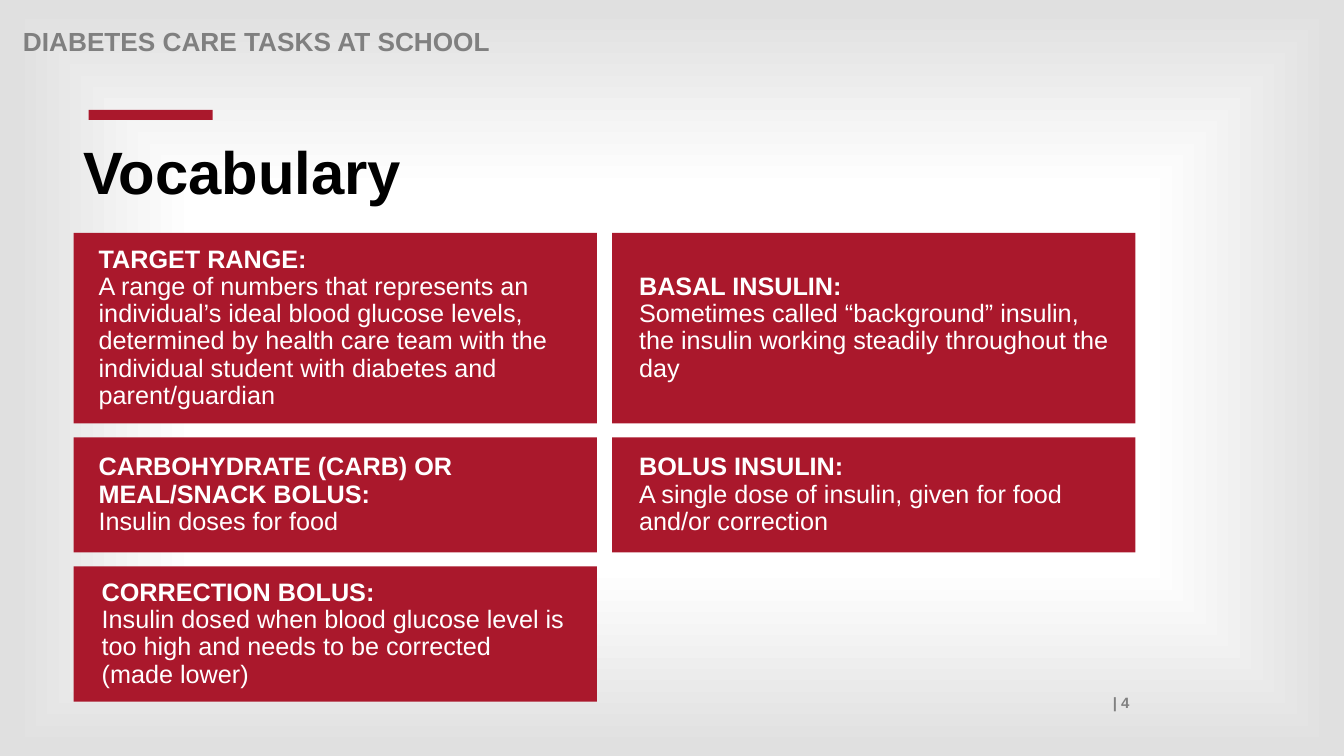
from pptx import Presentation
from pptx.dml.color import RGBColor
from pptx.enum.shapes import MSO_SHAPE
from pptx.enum.text import MSO_ANCHOR, PP_ALIGN
from pptx.oxml import parse_xml
from pptx.oxml.ns import nsdecls
from pptx.util import Inches, Pt

COLORS = {
    "red": "AA182C",
    "gray": "808080",
    "black": "000000",
    "white": "FFFFFF",
    "edge": "E0E0E0",
}
FONT = "Arial"

GRID_LEFT, GRID_TOP = 0.73, 2.31
CARD_WIDTH, COLUMN_GAP, ROW_GAP = 5.19, 0.15, 0.14
ROW_HEIGHTS = [1.89, 1.14, 1.34]
TEXT_WIDTH = 4.88

# row, column, text indent, term, definition
CARDS = [
    (0, 0, 0.15, "TARGET RANGE:",
     "A range of numbers that represents an individual’s ideal blood glucose "
     "levels, determined by health care team with the individual student with "
     "diabetes and parent/guardian"),
    (0, 1, 0.17, "BASAL INSULIN:",
     "Sometimes called “background” insulin, the insulin working steadily "
     "throughout the day"),
    (1, 0, 0.15, "CARBOHYDRATE (CARB) OR MEAL/SNACK BOLUS:",
     "Insulin doses for food"),
    (1, 1, 0.17, "BOLUS INSULIN:",
     "A single dose of insulin, given for food and/or correction"),
    (2, 0, 0.18, "CORRECTION BOLUS:",
     "Insulin dosed when blood glucose level is too high and needs to be "
     "corrected\n(made lower)"),
]


def set_background(slide):
    """Fill the slide with a gradient from a white centre to gray edges."""
    stops = [(12, "white"), (50, "white"), (98, "edge")]
    stop_xml = "".join(
        f'<a:gs pos="{position * 1000}"><a:srgbClr val="{COLORS[color]}"/></a:gs>'
        for position, color in stops
    )
    slide.background.fill.solid()
    properties = slide.background._cSld.bg.bgPr
    properties.replace(properties[0], parse_xml(
        f'<a:gradFill {nsdecls("a")} rotWithShape="1"><a:gsLst>{stop_xml}</a:gsLst>'
        '<a:path path="shape">'
        '<a:fillToRect l="50000" t="50000" r="50000" b="50000"/>'
        "</a:path></a:gradFill>"
    ))


def add_block(slide, left, top, width, height):
    block = slide.shapes.add_shape(
        MSO_SHAPE.RECTANGLE, Inches(left), Inches(top), Inches(width), Inches(height)
    )
    block.shadow.inherit = False
    block.fill.solid()
    block.fill.fore_color.rgb = RGBColor.from_string(COLORS["red"])
    block.line.fill.background()


def add_text(slide, text, left, top, width, height, *, size, color,
             align=PP_ALIGN.LEFT, anchor=MSO_ANCHOR.TOP, spacing=0.9, before=13.3,
             bold_lines=None):
    """Add one paragraph; bold_lines limits bold to the first lines."""
    box = slide.shapes.add_textbox(
        Inches(left), Inches(top), Inches(width), Inches(height)
    )
    frame = box.text_frame
    frame.word_wrap = True
    frame.vertical_anchor = anchor
    paragraph = frame.paragraphs[0]
    paragraph.alignment = align
    paragraph.line_spacing = spacing
    paragraph.space_before = Pt(before)
    for index, line in enumerate(text.split("\n")):
        if index:
            paragraph.add_line_break()
        run = paragraph.add_run()
        run.text = line
        run.font.name = FONT
        run.font.size = Pt(size)
        run.font.bold = bold_lines is None or index < bold_lines
        run.font.color.rgb = RGBColor.from_string(COLORS[color])


def add_card(slide, row, column, indent, term, definition):
    left = GRID_LEFT + column * (CARD_WIDTH + COLUMN_GAP)
    top = GRID_TOP + sum(ROW_HEIGHTS[:row]) + row * ROW_GAP
    height = ROW_HEIGHTS[row]
    add_block(slide, left, top, CARD_WIDTH, height)
    add_text(slide, f"{term}\n{definition}", left + indent, top, TEXT_WIDTH, height,
             size=18, color="white", anchor=MSO_ANCHOR.MIDDLE, bold_lines=1)


def main():
    presentation = Presentation()
    presentation.slide_width = Inches(13.33)
    presentation.slide_height = Inches(7.5)
    slide = presentation.slides.add_slide(presentation.slide_layouts[6])

    set_background(slide)
    add_text(slide, "| 4", 1.21, 6.83, 10.09, 0.28, size=10.7, color="gray",
             align=PP_ALIGN.RIGHT, spacing=1.0, before=0)
    add_text(slide, "DIABETES CARE TASKS AT SCHOOL", 0.13, 0.24, 11, 0.28,
             size=18.7, color="gray")
    add_block(slide, 0.88, 1.09, 1.23, 0.1)
    add_text(slide, "Vocabulary", GRID_LEFT, 1.37, 11.03, 1.3, size=42.7, color="black")
    for card in CARDS:
        add_card(slide, *card)

    presentation.save("out.pptx")


if __name__ == "__main__":
    main()
